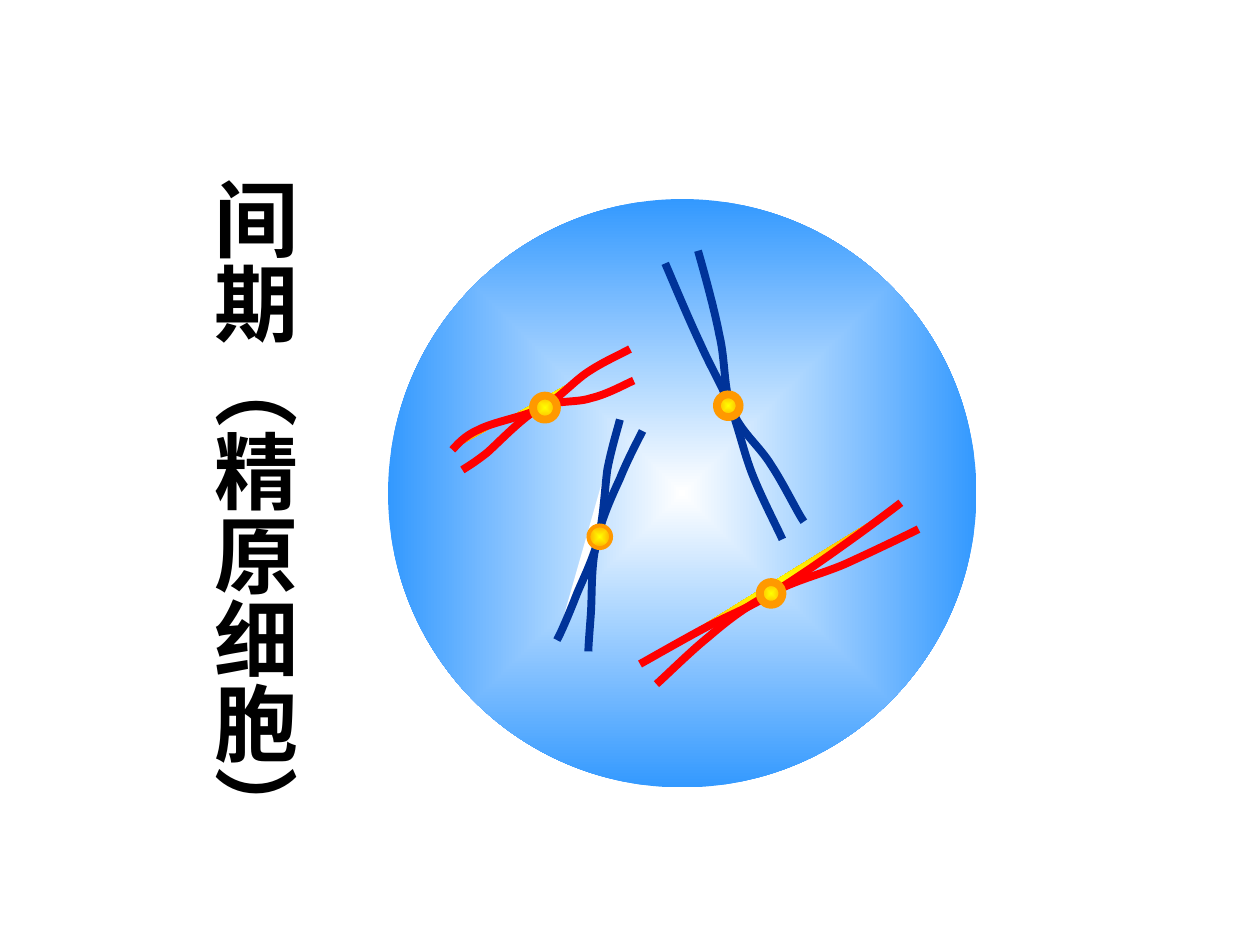
import pptx
import pptx.util
import pptx.dml.color
import pptx.enum.shapes
import pptx.enum.text
import pptx.oxml.ns
from dataclasses import dataclass
from lxml import etree

Inches = pptx.util.Inches
qn = pptx.oxml.ns.qn


@dataclass(frozen=True)
class Theme:
    font: str = "Times New Roman"
    title_size: int = 48
    text: str = "000000"
    red: str = "FF0000"
    blue: str = "003399"
    white: str = "FFFFFF"
    cell_gradient: tuple = ("FFFFFF", "3399FF")
    centromere_gradient: tuple = ("FFFF00", "FF9900")
    chromatid_width: float = 4.5


def rgb(value):
    return pptx.dml.color.RGBColor.from_string(value)


class CellSlide:
    def __init__(self, slide, theme):
        self.slide = slide
        self.theme = theme
        self.group = slide.shapes.add_group_shape()

    def paint(self, shape, fill=None, line=None, width=0):
        """Fill with a colour, a centred gradient (two colours) or nothing."""
        shape.shadow.inherit = False
        if fill is None:
            shape.fill.background()
        elif isinstance(fill, str):
            shape.fill.solid()
            shape.fill.fore_color.rgb = rgb(fill)
        else:
            shape.fill.gradient()
            for stop, color in zip(shape.fill.gradient_stops, fill):
                stop.color.rgb = rgb(color)
            gradient = shape._element.spPr.find(qn("a:gradFill"))
            gradient.remove(gradient.find(qn("a:lin")))
            center = etree.SubElement(gradient, qn("a:path"))
            center.set("path", "shape")
            rectangle = etree.SubElement(center, qn("a:fillToRect"))
            for side in "ltrb":
                rectangle.set(side, "50000")
        if line is None:
            shape.line.fill.background()
        else:
            shape.line.color.rgb = rgb(line)
            shape.line.width = pptx.util.Pt(width)

    def vertical_title(self, text, left, top, width, height):
        box = self.slide.shapes.add_textbox(*map(Inches, (left, top, width, height)))
        frame = box.text_frame
        frame.text = text
        frame.word_wrap = False
        frame.auto_size = pptx.enum.text.MSO_AUTO_SIZE.SHAPE_TO_FIT_TEXT
        frame._txBody.bodyPr.set("vert", "eaVert")
        font = frame.paragraphs[0].runs[0].font
        font.name = self.theme.font
        font.size = pptx.util.Pt(self.theme.title_size)
        font.bold = True
        font.color.rgb = rgb(self.theme.text)

    def disc(self, left, top, size, gradient, line=None, width=0, rotation=0):
        shape = self.group.shapes.add_shape(
            pptx.enum.shapes.MSO_SHAPE.OVAL, *map(Inches, (left, top, size, size)))
        shape.rotation = rotation
        self.paint(shape, gradient, line, width)

    def chromatid(self, points, color, fill=None):
        """Draw a curve: a start point, then three Bezier points per segment."""
        start, *rest = [(Inches(x), Inches(y)) for x, y in points]
        builder = self.group.shapes.build_freeform(*start)
        builder.add_line_segments(rest, close=False)
        shape = builder.convert_to_shape()
        # Merge each three straight steps into one Bezier segment
        steps = list(shape._element.iter(qn("a:lnTo")))
        for first in range(0, len(steps), 3):
            curve = etree.Element(qn("a:cubicBezTo"))
            steps[first].addprevious(curve)
            for step in steps[first:first + 3]:
                curve.append(step[0])
                step.getparent().remove(step)
        self.paint(shape, fill, color, self.theme.chromatid_width)

    def chromosome(self, color, chromatids, centromere):
        for points, fill in chromatids:
            self.chromatid(points, color, fill)
        left, top, size, width, rotation = centromere
        gradient = self.theme.centromere_gradient
        self.disc(left, top, size, gradient, gradient[1], width, rotation)


theme = Theme()
YELLOW = theme.centromere_gradient

# Colour, two chromatids (points, fill), centromere (left, top, size, line, rotation)
CHROMOSOMES = [
    # Short blue
    (theme.blue, [
        ([(4.67, 5.17), (4.67, 5.12), (4.68, 5.01), (4.69, 4.87),
          (4.7, 4.73), (4.69, 4.5), (4.73, 4.33), (4.76, 4.15), (4.85, 3.95),
          (4.92, 3.8), (4.98, 3.65), (5.06, 3.5), (5.1, 3.42)], None),
        ([(4.42, 5.08), (4.45, 5.03), (4.53, 4.84), (4.58, 4.71),
          (4.64, 4.57), (4.71, 4.43), (4.75, 4.27), (4.79, 4.11), (4.8, 3.88),
          (4.82, 3.73), (4.85, 3.57), (4.9, 3.41), (4.92, 3.33)], theme.white),
    ], (4.67, 4.17, 0.18, 2.25, 282.9)),
    # Short red
    (theme.red, [
        ([(3.67, 3.73), (3.7, 3.71), (3.77, 3.67), (3.87, 3.59),
          (3.97, 3.5), (4.15, 3.31), (4.28, 3.24), (4.42, 3.17), (4.57, 3.2),
          (4.69, 3.16), (4.82, 3.13), (4.96, 3.05), (5.03, 3.02)], None),
        ([(3.59, 3.57), (3.62, 3.54), (3.68, 3.46), (3.8, 3.41),
          (3.91, 3.35), (4.15, 3.31), (4.3, 3.24), (4.44, 3.16), (4.56, 3.02),
          (4.67, 2.95), (4.79, 2.87), (4.93, 2.81), (5, 2.77)], YELLOW),
    ], (4.23, 3.14, 0.19, 4.5, 328.9)),
    # Long blue
    (theme.blue, [
        ([(6.38, 4.14), (6.33, 4.07), (6.22, 3.84), (6.12, 3.69),
          (6.03, 3.54), (5.87, 3.42), (5.81, 3.25), (5.74, 3.08), (5.76, 2.87),
          (5.71, 2.66), (5.67, 2.45), (5.58, 2.13), (5.54, 1.99)], None),
        ([(6.21, 4.28), (6.17, 4.19), (6.04, 3.94), (5.97, 3.76),
          (5.9, 3.58), (5.86, 3.38), (5.79, 3.21), (5.72, 3.04), (5.64, 2.91),
          (5.56, 2.73), (5.47, 2.54), (5.34, 2.23), (5.28, 2.09)], theme.white),
    ], (5.69, 3.13, 0.18, 4.5, 250.4)),
    # Long red
    (theme.red, [
        ([(5.08, 5.27), (5.17, 5.22), (5.45, 5.06), (5.62, 4.97),
          (5.79, 4.88), (5.93, 4.83), (6.11, 4.72), (6.29, 4.61), (6.51, 4.46),
          (6.69, 4.33), (6.86, 4.21), (7.06, 4.06), (7.15, 3.99)], YELLOW),
        ([(5.21, 5.43), (5.28, 5.37), (5.48, 5.17), (5.63, 5.05),
          (5.78, 4.92), (5.94, 4.8), (6.12, 4.71), (6.3, 4.61), (6.51, 4.56),
          (6.7, 4.48), (6.9, 4.39), (7.17, 4.26), (7.29, 4.2)], None),
    ], (6.03, 4.62, 0.18, 4.5, 332)),
]


def main():
    presentation = pptx.Presentation()
    presentation.slide_width = Inches(10)
    presentation.slide_height = Inches(7.5)
    slide = presentation.slides.add_slide(presentation.slide_layouts[6])
    cell = CellSlide(slide, theme)

    # Stage name
    cell.vertical_title("间期（精原细胞）", 1.46, 1.31, 1, 5.34)

    # Cell body with its chromosomes
    cell.disc(3.08, 1.58, 4.67, theme.cell_gradient)
    for color, chromatids, centromere in CHROMOSOMES:
        cell.chromosome(color, chromatids, centromere)

    presentation.save("out.pptx")


if __name__ == "__main__":
    main()
